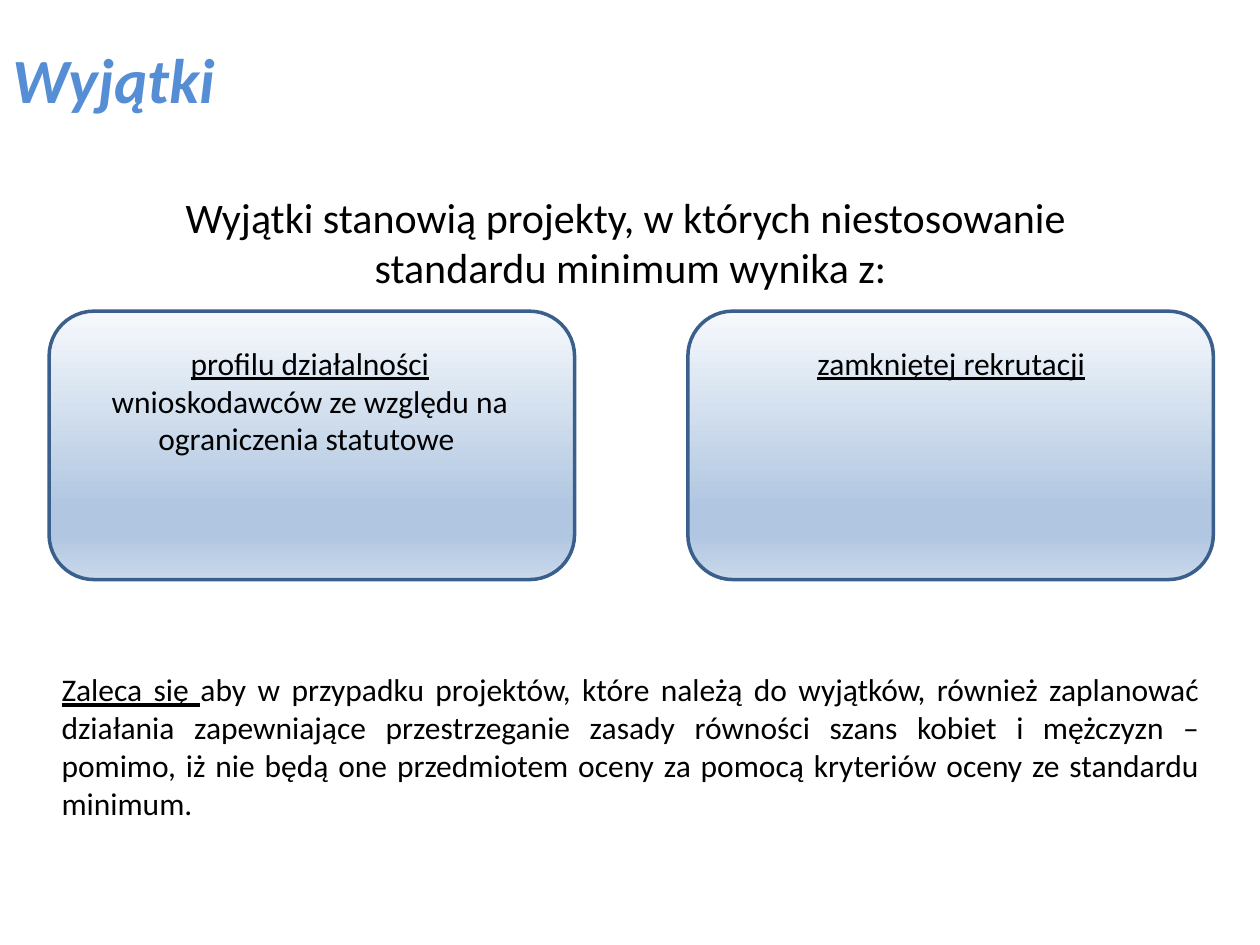
import pptx
import pptx.util
import pptx.dml.color
import pptx.enum.shapes
import pptx.enum.text
import pptx.oxml
import pptx.oxml.ns
from pptx.util import Inches

FONT = "Calibri"
BLACK = "000000"
TITLE_BLUE = "558ED5"
PANEL_LINE = "3A5F8C"
PANEL_STOPS = [(0, "F6F9FC"), (74, "B0C6E1"), (83, "B0C6E1"), (100, "CAD9EB")]
ALIGN = pptx.enum.text.PP_ALIGN


def color(hex_value):
    return pptx.dml.color.RGBColor.from_string(hex_value)


def format_run(run, size, hex_value=BLACK, underline=None):
    run.font.name = FONT
    run.font.size = pptx.util.Pt(size)
    run.font.color.rgb = color(hex_value)
    run.font.underline = underline


def add_title(slide, text):
    title = slide.shapes.title
    title.left, title.top = Inches(0), Inches(0)
    title.width, title.height = Inches(9), Inches(1.25)
    title.text_frame.text = text
    title.text_frame.vertical_anchor = pptx.enum.text.MSO_ANCHOR.MIDDLE
    paragraph = title.text_frame.paragraphs[0]
    paragraph.alignment = ALIGN.LEFT
    run = paragraph.runs[0]
    format_run(run, 36, TITLE_BLUE)
    run.font.bold = run.font.italic = True


def add_panel(slide, left):
    """Rounded panel with a vertical gradient."""
    panel = slide.shapes.add_shape(
        pptx.enum.shapes.MSO_SHAPE.ROUNDED_RECTANGLE,
        Inches(left), Inches(2.47), Inches(4.17), Inches(2.13))
    panel.shadow.inherit = False
    panel.line.color.rgb = color(PANEL_LINE)
    panel.line.width = pptx.util.Pt(2)
    panel.fill.gradient()
    panel.fill.gradient_angle = 270
    # The gradient has four stops, so its stop list is rebuilt
    stop_list = panel._element.spPr.find(".//" + pptx.oxml.ns.qn("a:gsLst"))
    for stop in list(stop_list):
        stop_list.remove(stop)
    for position, hex_value in PANEL_STOPS:
        stop_list.append(pptx.oxml.parse_xml(
            f'<a:gs {pptx.oxml.ns.nsdecls("a")} pos="{position * 1000}">'
            f'<a:srgbClr val="{hex_value}"/></a:gs>'))


def add_text_box(slide, left, top, width, height):
    box = slide.shapes.add_textbox(
        Inches(left), Inches(top), Inches(width), Inches(height))
    box.text_frame.word_wrap = True
    return box.text_frame


def fill_paragraph(paragraph, alignment, size, underlined="", plain=""):
    """Write an underlined opening followed by plain text."""
    paragraph.alignment = alignment
    for text, underline in ((underlined, True), (plain, False)):
        if text:
            run = paragraph.add_run()
            run.text = text
            format_run(run, size, underline=underline)


def main():
    presentation = pptx.Presentation()
    presentation.slide_width = Inches(10)
    presentation.slide_height = Inches(7.5)
    slide = presentation.slides.add_slide(presentation.slide_layouts[5])

    # Panels behind the text
    for left in (5.46, 0.39):
        add_panel(slide, left)
    add_title(slide, "Wyjątki")

    # Introduction above the panels, recommendation below them
    body = add_text_box(slide, 0.39, 1.47, 9.23, 5.45)
    fill_paragraph(body.paragraphs[0], ALIGN.CENTER, 24,
                   plain="Wyjątki stanowią projekty, w których niestosowanie ")
    fill_paragraph(body.add_paragraph(), ALIGN.CENTER, 24,
                   plain="standardu minimum wynika z:")
    recommendation = body.add_paragraph()
    recommendation.space_before = Inches(3)
    fill_paragraph(
        recommendation, ALIGN.JUSTIFY, 18, "Zaleca się ",
        "aby w przypadku projektów, które należą do wyjątków, również "
        "zaplanować działania zapewniające przestrzeganie zasady równości "
        "szans kobiet i mężczyzn – pomimo, iż nie będą one przedmiotem oceny "
        "za pomocą kryteriów oceny ze standardu minimum.")

    # Panel texts
    profile = add_text_box(slide, 0.63, 2.68, 3.66, 1.55)
    fill_paragraph(profile.paragraphs[0], ALIGN.CENTER, 18,
                   "profilu działalności ",
                   "wnioskodawców ze względu na ograniczenia statutowe ")
    recruitment = add_text_box(slide, 5.62, 2.68, 3.86, 1.25)
    fill_paragraph(recruitment.paragraphs[0], ALIGN.CENTER, 18,
                   "zamkniętej rekrutacji")

    presentation.save("out.pptx")


if __name__ == "__main__":
    main()
